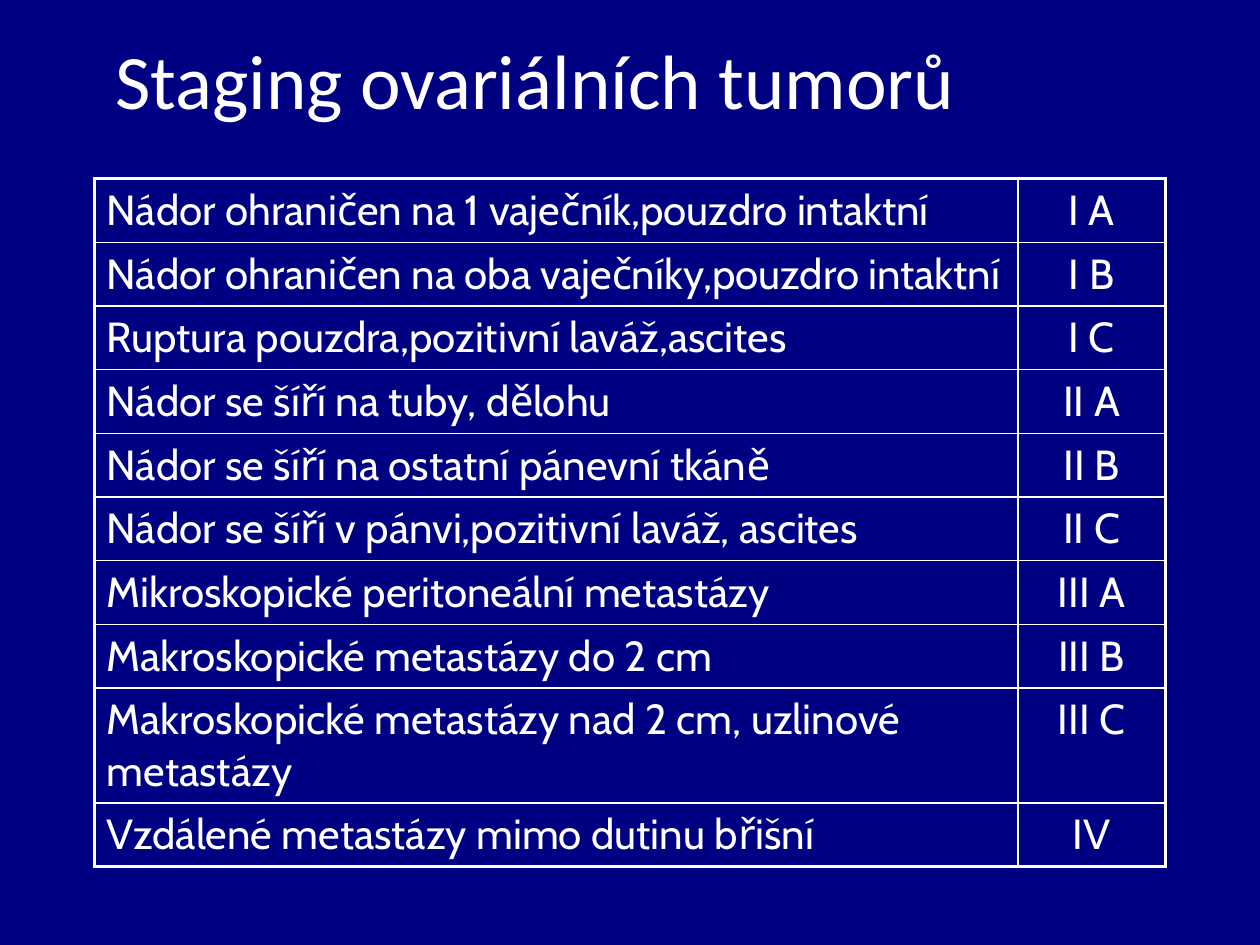
"""Build a slide with the staging table of ovarian tumours."""
from dataclasses import dataclass

from lxml import etree
from pptx import Presentation
from pptx.dml.color import RGBColor
from pptx.enum.text import MSO_ANCHOR, PP_ALIGN
from pptx.oxml.ns import qn
from pptx.util import Cm, Pt

CENTER, LEFT = PP_ALIGN.CENTER, PP_ALIGN.LEFT
MIDDLE = MSO_ANCHOR.MIDDLE

TITLE = "Staging ovariálních tumorů"
STAGES = [
    ("Nádor ohraničen na 1 vaječník,pouzdro intaktní", "I A"),
    ("Nádor ohraničen na oba vaječníky,pouzdro intaktní", "I B"),
    ("Ruptura pouzdra,pozitivní laváž,ascites", "I C"),
    ("Nádor se šíří na tuby, dělohu", "II A"),
    ("Nádor se šíří na ostatní pánevní tkáně", "II B"),
    ("Nádor se šíří v pánvi,pozitivní laváž, ascites", "II C"),
    ("Mikroskopické peritoneální metastázy", "III A"),
    ("Makroskopické metastázy do 2 cm", "III B"),
    ("Makroskopické metastázy nad 2 cm, uzlinové metastázy", "III C"),
    ("Vzdálené metastázy mimo dutinu břišní", "IV"),
]
TALL_ROW = 8
COLUMNS = [(Cm(18.62), LEFT), (Cm(2.97), CENTER)]
ROW_HEIGHT, TALL_HEIGHT = Cm(1.28), Cm(2.31)


@dataclass(frozen=True)
class Theme:
    background: str = "000082"
    ink: str = "FFFFFF"
    title_font: str = "Calibri"
    body_font: str = "Cabin"
    title_size: int = 44
    body_size: int = 24
    outer_line: float = 2.25
    inner_line: float = 1


THEME = Theme()


def write(tf, text, font, size, align):
    tf.text = text
    p = tf.paragraphs[0]
    p.alignment = align
    r = p.runs[0]
    r.font.name = font
    r.font.size = Pt(size)
    r.font.color.rgb = RGBColor.from_string(THEME.ink)


def set_borders(cell, outer_sides):
    tc_pr = cell._tc.get_or_add_tcPr()
    for i, side in enumerate("LRTB"):
        width = THEME.outer_line if side in outer_sides else THEME.inner_line
        ln = etree.Element(qn(f"a:ln{side}"), w=str(Pt(width)))
        fill = etree.SubElement(ln, qn("a:solidFill"))
        etree.SubElement(fill, qn("a:srgbClr"), val=THEME.ink)
        tc_pr.insert(i, ln)


def add_title(s):
    sp = s.shapes.title
    sp.left, sp.top, sp.width, sp.height = Cm(0), Cm(0), Cm(21.59), Cm(3.18)
    tf = sp.text_frame
    tf.vertical_anchor = MIDDLE
    write(tf, TITLE, THEME.title_font, THEME.title_size, CENTER)


def add_staging_table(s):
    last_row, last_col = len(STAGES) - 1, len(COLUMNS) - 1
    heights = [TALL_HEIGHT if i == TALL_ROW else ROW_HEIGHT for i in range(len(STAGES))]
    width = sum(w for w, _ in COLUMNS)
    table = s.shapes.add_table(
        len(STAGES), len(COLUMNS), Cm(1.9), Cm(3.6), width, sum(heights)
    ).table
    table.first_row = table.horz_banding = False
    for col, (col_width, _) in zip(table.columns, COLUMNS):
        col.width = col_width
    for i, stage in enumerate(STAGES):
        table.rows[i].height = heights[i]
        for j, text in enumerate(stage):
            cell = table.cell(i, j)
            cell.fill.background()
            write(cell.text_frame, text, THEME.body_font, THEME.body_size, COLUMNS[j][1])
            edges = {"L": j == 0, "R": j == last_col, "T": i == 0, "B": i == last_row}
            set_borders(cell, [side for side, outer in edges.items() if outer])


def main():
    prs = Presentation()
    prs.slide_width, prs.slide_height = Cm(25.4), Cm(19.05)
    s = prs.slides.add_slide(prs.slide_layouts[5])
    s.background.fill.solid()
    s.background.fill.fore_color.rgb = RGBColor.from_string(THEME.background)
    add_title(s)
    add_staging_table(s)
    prs.save("out.pptx")


if __name__ == "__main__":
    main()
